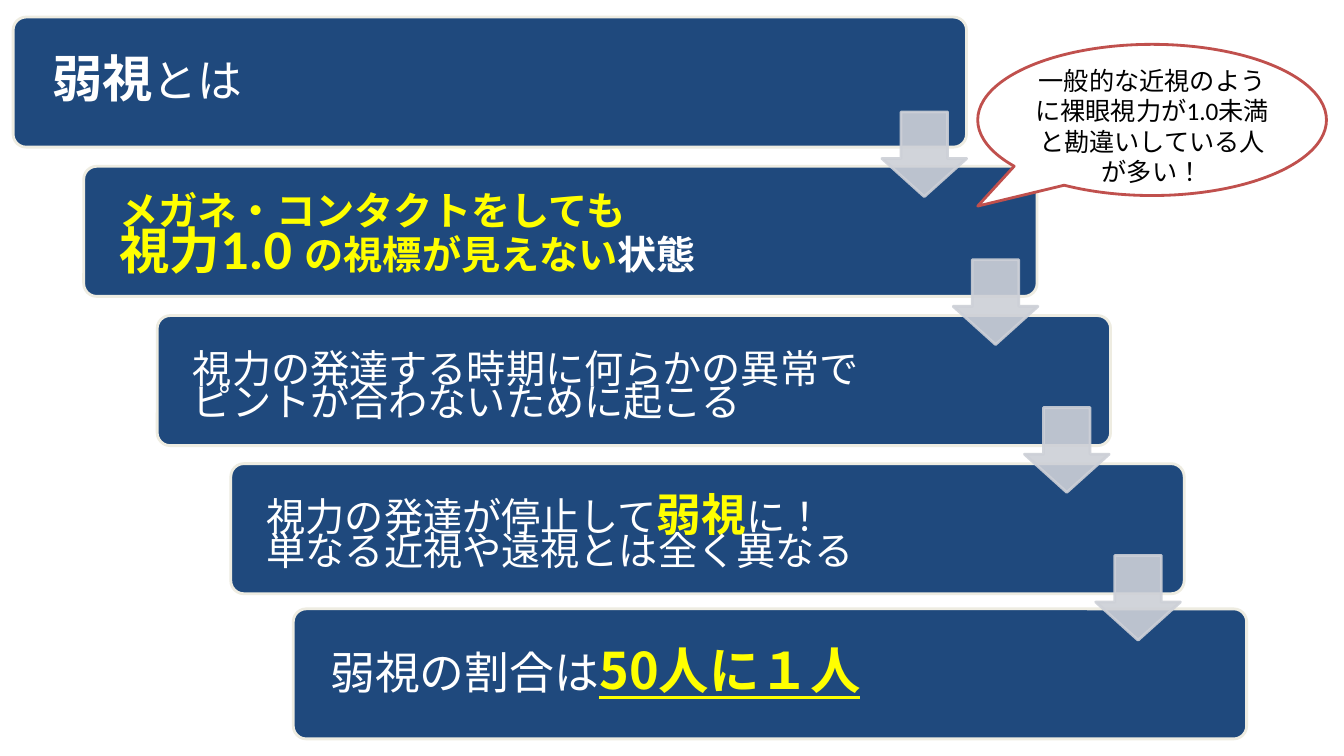
from dataclasses import dataclass
from typing import Optional

from lxml import etree
from pptx import Presentation
from pptx import util as u
from pptx.dml import color
from pptx.enum import lang, shapes, text
from pptx.oxml import ns

COLORS = {
    "navy": "1F497D",
    "cream": "EEECE1",
    "gray": "CDD0D7",
    "red": "C0504D",
    "white": "FFFFFF",
    "yellow": "FFFF00",
    "black": "000000",
}
LATIN = "Calibri"
JAPANESE = "Noto Sans CJK JP"
CARD_W, CARD_H = 681, 92.9
LABEL_W, LABEL_H = 564.5, 87.1
LABEL_INSET = 2.6
ARROW_SIZE = 60.5
ARROW_LEFT, ARROW_TOP = 630, 80
ARROW_DX, ARROW_DY = 50.9, 105.6


@dataclass
class Run:
    text: str
    size: float
    color: str = "white"
    bold: bool = False
    underline: bool = False
    font: str = LATIN


@dataclass
class Step:
    left: float
    top: float
    margins: tuple[float, float, float, float]
    spacing: float
    lines: list[list[Run]]
    is_title: bool = False


STEPS = [
    Step(9.4, 12.2, (10.8, 10.8, 10.8, 10.8), 0.9,
         [[Run("弱視", 36, bold=True), Run("とは", 32)]], is_title=True),
    Step(59.8, 118.8, (8.6, 14.4, 8.6, 2.9), 0.7,
         [[Run("メガネ・コンタクトをしても", 28, "yellow", True)],
          [Run("視力", 36, "yellow", True), Run("1.0 ", 40, "yellow", True),
           Run("の視標が見えない", 28, "yellow", True), Run("状態", 28, bold=True)]]),
    Step(112.3, 225.4, (8.6, 22.3, 8.6, 8.6), 0.7,
         [[Run("視力の発達する時期に何らかの異常で", 28)],
          [Run("ピントが合わないために起こる", 28)]]),
    Step(164.9, 331.2, (8.6, 11.5, 8.6, 0), 0.7,
         [[Run("視力の発達が停止して", 28), Run("弱視", 32, "yellow", True), Run("に！", 28)],
          [Run("単なる近視や遠視とは全く異なる", 28)]]),
    Step(209.5, 434.9, (9.4, 9.4, 9.4, 9.4), 0.9,
         [[Run("弱視の割合は", 32, font=JAPANESE),
           Run("50人に１人", 36, "yellow", True, True, JAPANESE)]]),
]


def rgb(name: str) -> color.RGBColor:
    return color.RGBColor.from_string(COLORS[name])


def add_run(p, run: Run) -> None:
    r = p.add_run()
    r.text = run.text
    font = r.font
    font.size = u.Pt(run.size)
    font.bold = run.bold
    font.underline = run.underline
    font.color.rgb = rgb(run.color)
    font.name = run.font
    font.language_id = lang.MSO_LANGUAGE_ID.JAPANESE
    ea = etree.SubElement(r._r.get_or_add_rPr(), ns.qn("a:ea"))
    ea.set("typeface", JAPANESE)


def fill_text(sp, lines: list[list[Run]], margins: tuple[float, float, float, float],
              align: text.PP_ALIGN, spacing: Optional[float] = None, indent: float = 0) -> None:
    tf = sp.text_frame
    tf.word_wrap = True
    tf.auto_size = text.MSO_AUTO_SIZE.NONE
    tf.vertical_anchor = text.MSO_ANCHOR.MIDDLE
    tf.margin_left, tf.margin_top, tf.margin_right, tf.margin_bottom = map(u.Pt, margins)
    for i, runs in enumerate(lines):
        p = tf.add_paragraph() if i else tf.paragraphs[0]
        p.alignment = align
        if spacing:
            p.line_spacing = spacing
        pPr = p._p.get_or_add_pPr()
        pPr.set("marL", str(int(u.Pt(indent))))
        pPr.set("indent", "0")
        for run in runs:
            add_run(p, run)


def add_box(s, kind: shapes.MSO_SHAPE, left: float, top: float, width: float, height: float,
            fill: str, line: str, adjustments: list[float]):
    sp = s.shapes.add_shape(kind, u.Pt(left), u.Pt(top), u.Pt(width), u.Pt(height))
    sp.shadow.inherit = False
    sp.fill.solid()
    sp.fill.fore_color.rgb = rgb(fill)
    sp.line.color.rgb = rgb(line)
    sp.line.width = u.Pt(2)
    for i, value in enumerate(adjustments):
        sp.adjustments[i] = value
    return sp


def add_step(s, step: Step) -> None:
    add_box(s, shapes.MSO_SHAPE.ROUNDED_RECTANGLE, step.left, step.top, CARD_W, CARD_H,
            "navy", "cream", [0.1])
    frame = [u.Pt(v) for v in (step.left + LABEL_INSET, step.top + LABEL_INSET, LABEL_W, LABEL_H)]
    if step.is_title:
        label = s.shapes.title
        label.left, label.top, label.width, label.height = frame
        s.shapes._spTree.append(label._element)
    else:
        label = s.shapes.add_textbox(*frame)
    fill_text(label, step.lines, step.margins, text.PP_ALIGN.LEFT, step.spacing, 14.4)


def add_arrow(s, index: int) -> None:
    sp = add_box(s, shapes.MSO_SHAPE.DOWN_ARROW, ARROW_LEFT + index * ARROW_DX,
                 ARROW_TOP + index * ARROW_DY, ARROW_SIZE, ARROW_SIZE,
                 "gray", "gray", [0.55, 0.45])
    for clr in sp._element.spPr.iter(ns.qn("a:srgbClr")):
        etree.SubElement(clr, ns.qn("a:alpha")).set("val", "90000")


def main() -> None:
    prs = Presentation()
    prs.slide_width, prs.slide_height = u.Pt(960), u.Pt(540)
    s = prs.slides.add_slide(prs.slide_layouts.get_by_name("Title Only"))
    for step in STEPS:
        add_step(s, step)
    for index in range(len(STEPS) - 1):
        add_arrow(s, index)
    callout = add_box(s, shapes.MSO_SHAPE.OVAL_CALLOUT, 698.4, 31.7, 249.1, 108,
                      "white", "red", [-0.5, 0.57])
    note = Run("一般的な近視のように裸眼視力が1.0未満と勘違いしている人が多い！", 18, "black")
    fill_text(callout, [[note]], (0, 8.6, 0, 0), text.PP_ALIGN.CENTER)
    prs.save("out.pptx")


if __name__ == "__main__":
    main()
